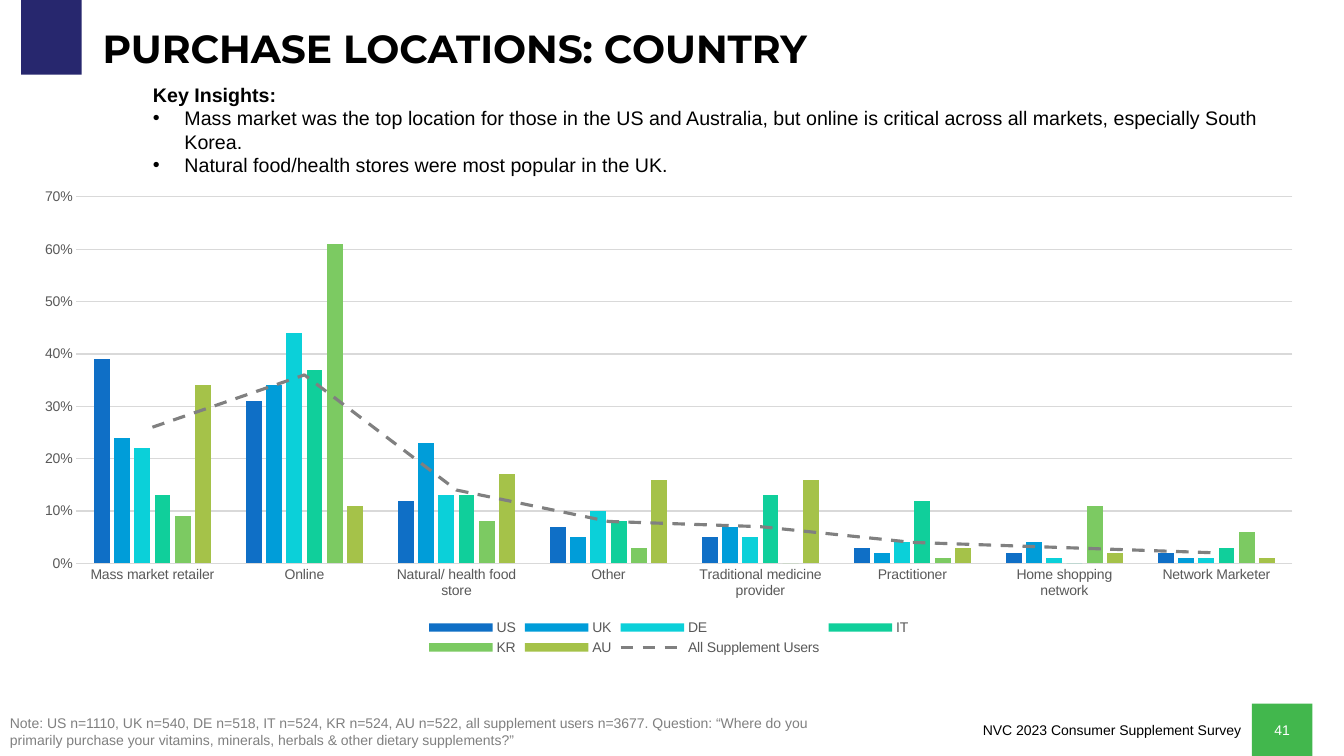
from lxml import etree
from pptx import Presentation
from pptx.chart.data import CategoryChartData
from pptx.dml.color import RGBColor
from pptx.enum.chart import XL_CHART_TYPE, XL_LEGEND_POSITION, XL_MARKER_STYLE, XL_TICK_MARK
from pptx.enum.dml import MSO_LINE
from pptx.enum.shapes import MSO_SHAPE
from pptx.enum.text import MSO_ANCHOR, MSO_AUTO_SIZE, PP_ALIGN
from pptx.oxml.ns import qn
from pptx.oxml.xmlchemy import OxmlElement
from pptx.util import Pt

COLUMNS = XL_CHART_TYPE.COLUMN_CLUSTERED
LEGEND_BOTTOM = XL_LEGEND_POSITION.BOTTOM
NO_MARKER = XL_MARKER_STYLE.NONE
NO_TICK = XL_TICK_MARK.NONE
DASH = MSO_LINE.DASH
RECTANGLE = MSO_SHAPE.RECTANGLE
TOP, MIDDLE = MSO_ANCHOR.TOP, MSO_ANCHOR.MIDDLE
NO_AUTOFIT = MSO_AUTO_SIZE.NONE
LEFT, CENTER, RIGHT = PP_ALIGN.LEFT, PP_ALIGN.CENTER, PP_ALIGN.RIGHT

BLACK = RGBColor(0x00, 0x00, 0x00)
WHITE = RGBColor(0xFF, 0xFF, 0xFF)
NAVY = RGBColor(0x27, 0x27, 0x6E)
GREEN = RGBColor(0x42, 0xB7, 0x4D)
GRAY = RGBColor(0x80, 0x80, 0x80)
AXIS_TEXT = RGBColor(0x59, 0x59, 0x59)
GRID = RGBColor(0xD9, 0xD9, 0xD9)

BODY_FONT = "Arial"
TITLE_FONT = "Montserrat"
BULLET_INDENT = 22.5

LOCATIONS = ["Mass market retailer", "Online", "Natural/ health food store", "Other",
             "Traditional medicine provider", "Practitioner", "Home shopping network",
             "Network Marketer"]
COUNTRIES = [
    ("US", RGBColor(0x0F, 0x6F, 0xC6), (0.39, 0.31, 0.12, 0.07, 0.05, 0.03, 0.02, 0.02)),
    ("UK", RGBColor(0x00, 0x9D, 0xD9), (0.24, 0.34, 0.23, 0.05, 0.07, 0.02, 0.04, 0.01)),
    ("DE", RGBColor(0x0B, 0xD0, 0xD9), (0.22, 0.44, 0.13, 0.10, 0.05, 0.04, 0.01, 0.01)),
    ("IT", RGBColor(0x10, 0xCF, 0x9B), (0.13, 0.37, 0.13, 0.08, 0.13, 0.12, 0.00, 0.03)),
    ("KR", RGBColor(0x7C, 0xCA, 0x62), (0.09, 0.61, 0.08, 0.03, 0.00, 0.01, 0.11, 0.06)),
    ("AU", RGBColor(0xA5, 0xC2, 0x49), (0.34, 0.11, 0.17, 0.16, 0.16, 0.03, 0.02, 0.01)),
]
ALL_USERS = (0.26, 0.36, 0.14, 0.08, 0.07, 0.04, 0.03, 0.02)


def style_font(font, size, color, name=BODY_FONT, bold=False):
    font.size, font.name, font.bold = Pt(size), name, bold
    font.color.rgb = color


def write(paragraph, text, size=10, color=BLACK, font=BODY_FONT, bold=False,
          align=LEFT, bullet=False, line_spacing=None):
    """Fill one paragraph with formatted text."""
    if bullet:
        properties = paragraph._p.get_or_add_pPr()
        properties.set("marL", str(Pt(BULLET_INDENT)))
        properties.set("indent", str(-Pt(BULLET_INDENT)))
        etree.SubElement(properties, qn("a:buFont")).set("typeface", BODY_FONT)
        etree.SubElement(properties, qn("a:buChar")).set("char", "•")
    paragraph.alignment = align
    if line_spacing:
        paragraph.line_spacing = line_spacing
    run = paragraph.add_run()
    run.text = text
    style_font(run.font, size, color, font, bold)


def add_text_box(slide, left, top, width, height):
    frame = slide.shapes.add_textbox(Pt(left), Pt(top), Pt(width), Pt(height)).text_frame
    frame.word_wrap = True
    frame.vertical_anchor = TOP
    return frame


def add_block(slide, left, top, width, height, color):
    block = slide.shapes.add_shape(RECTANGLE, Pt(left), Pt(top), Pt(width), Pt(height))
    block.shadow.inherit = False
    block.fill.solid()
    block.fill.fore_color.rgb = color
    block.line.fill.background()
    return block


def add_title(slide, text):
    title = slide.shapes.title
    title.left, title.top, title.width, title.height = Pt(66.2), Pt(18), Pt(828), Pt(36)
    frame = title.text_frame
    frame.word_wrap = True
    frame.auto_size = NO_AUTOFIT
    frame.vertical_anchor = MIDDLE
    write(frame.paragraphs[0], text, size=28, font=TITLE_FONT, bold=True, line_spacing=0.9)


def append_setting(parent, tag, value):
    setting = OxmlElement(tag)
    setting.set("val", value)
    parent.append(setting)


def move_last_series_to_line(chart):
    """Turn the last column series into a line on the same axes."""
    columns = chart.plots[0]._element
    series = columns.findall(qn("c:ser"))[-1]
    for column_setting in series.findall(qn("c:invertIfNegative")):
        series.remove(column_setting)
    lines = OxmlElement("c:lineChart")
    append_setting(lines, "c:grouping", "standard")
    append_setting(lines, "c:varyColors", "0")
    lines.append(series)
    append_setting(lines, "c:marker", "1")
    for axis_id in columns.findall(qn("c:axId")):
        append_setting(lines, "c:axId", axis_id.get("val"))
    columns.addnext(lines)


def style_axis(axis):
    axis.major_tick_mark = axis.minor_tick_mark = NO_TICK
    style_font(axis.tick_labels.font, 10, AXIS_TEXT)


def style_rule(line):
    line.color.rgb = GRID
    line.width = Pt(0.75)


def add_purchase_chart(slide):
    data = CategoryChartData(number_format="0%")
    data.categories = LOCATIONS
    for country, _, shares in COUNTRIES:
        data.add_series(country, shares)
    data.add_series("All Supplement Users", ALL_USERS)
    chart = slide.shapes.add_chart(COLUMNS, Pt(13.7), Pt(128.2), Pt(928), Pt(342.7), data).chart
    chart.has_title = False
    style_font(chart.font, 10, BLACK)
    move_last_series_to_line(chart)

    # Country columns
    columns, average = chart.plots
    columns.gap_width, columns.overlap = 219, -27
    columns.vary_by_categories = False
    for series, (_, color, _) in zip(columns.series, COUNTRIES):
        series.format.fill.solid()
        series.format.fill.fore_color.rgb = color

    # Dashed line for all users
    all_users = average.series[0]
    all_users.smooth = False
    all_users.marker.style = NO_MARKER
    all_users.format.line.color.rgb = GRAY
    all_users.format.line.width = Pt(2.25)
    all_users.format.line.dash_style = DASH

    # Axes and legend
    locations, shares = chart.category_axis, chart.value_axis
    style_axis(locations)
    style_rule(locations.format.line)
    style_axis(shares)
    shares.format.line.fill.background()
    shares.minimum_scale, shares.maximum_scale, shares.major_unit = 0, 0.7, 0.1
    shares.tick_labels.number_format = "0%"
    shares.tick_labels.number_format_is_linked = False
    style_rule(shares.major_gridlines.format.line)
    chart.has_legend = True
    chart.legend.position = LEGEND_BOTTOM
    chart.legend.include_in_layout = False
    style_font(chart.legend.font, 10, AXIS_TEXT)


def add_insights(slide):
    frame = add_text_box(slide, 102.2, 55.4, 823, 74.9)
    write(frame.paragraphs[0], "Key Insights:", size=14, bold=True)
    for insight in (
        "Mass market was the top location for those in the US and Australia, "
        "but online is critical across all markets, especially South Korea.",
        "Natural food/health stores were most popular in the UK.",
    ):
        write(frame.add_paragraph(), insight, size=14, bullet=True)


def add_footer(slide):
    survey = add_text_box(slide, 570.2, 511.9, 323.3, 19.4)
    write(survey.paragraphs[0], "NVC 2023 Consumer Supplement Survey", align=RIGHT)
    page = add_block(slide, 894.2, 502.6, 43.2, 37.4, GREEN).text_frame
    page.vertical_anchor = MIDDLE
    write(page.paragraphs[0], "41", color=WHITE, align=CENTER)
    note = add_text_box(slide, 0, 506.9, 623.5, 31.7)
    write(note.paragraphs[0],
          "Note: US n=1110, UK n=540, DE n=518, IT n=524, KR n=524, AU n=522, "
          "all supplement users n=3677. Question: “Where do you primarily purchase "
          "your vitamins, minerals, herbals & other dietary supplements?”", color=GRAY)


def main():
    deck = Presentation()
    deck.slide_width, deck.slide_height = Pt(960), Pt(540)
    slide = deck.slides.add_slide(deck.slide_layouts.get_by_name("Title Only"))
    add_block(slide, 15.1, -3.6, 43.2, 56.9, NAVY)
    add_title(slide, "PURCHASE LOCATIONS: COUNTRY")
    add_purchase_chart(slide)
    add_insights(slide)
    add_footer(slide)
    deck.save("out.pptx")


if __name__ == "__main__":
    main()
